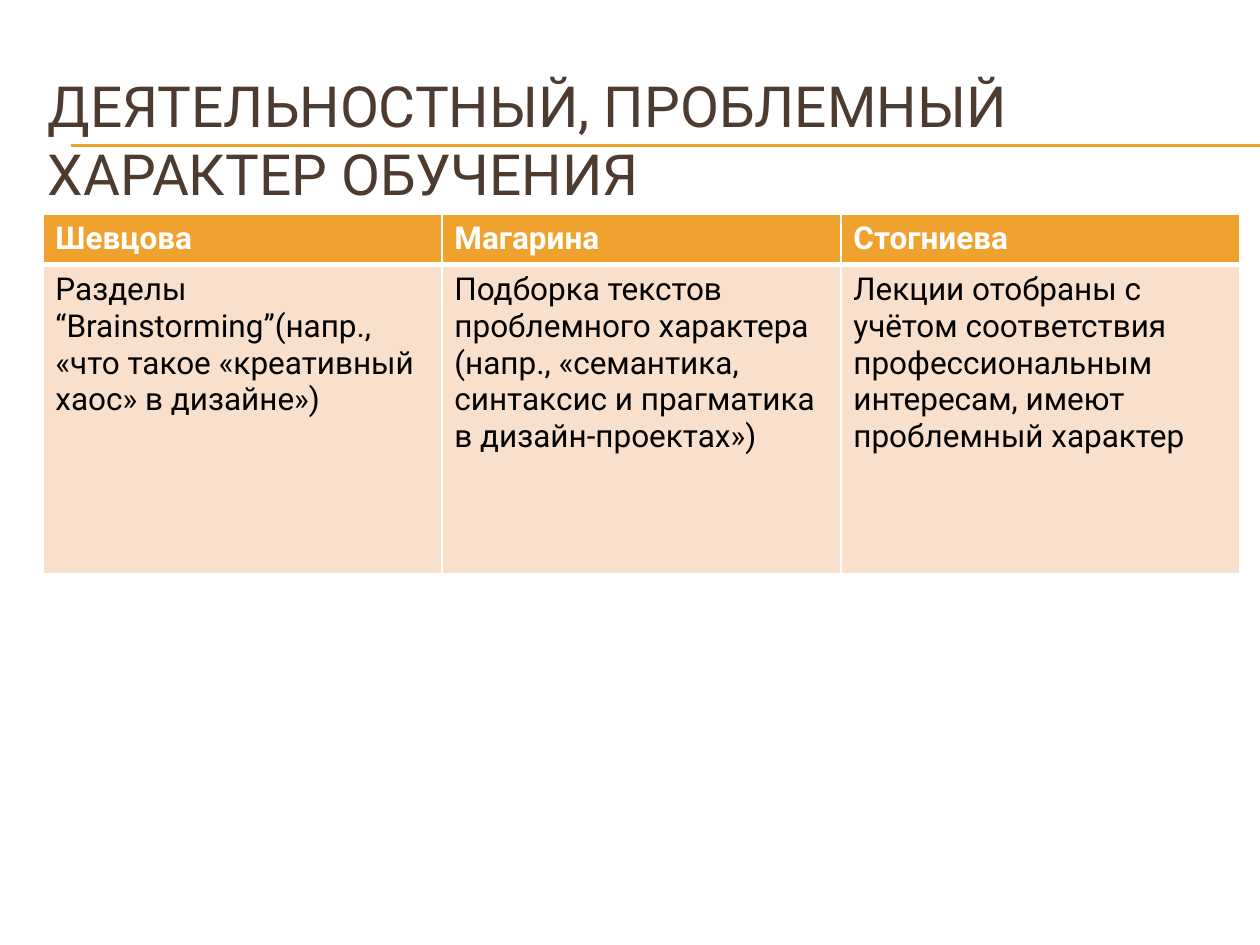
from lxml.etree import SubElement
from pptx import Presentation
from pptx.dml.color import RGBColor
from pptx.enum.shapes import MSO_CONNECTOR
from pptx.enum.text import MSO_ANCHOR
from pptx.oxml import parse_xml
from pptx.oxml.ns import nsdecls, qn
from pptx.util import Inches, Pt

FONT = "Roboto"
COLORS = {
    "title": "4E3B30",
    "accent": "F0A22E",
    "body": "F9E0CD",
    "white": "FFFFFF",
    "black": "000000",
}
ROWS = [
    ["Шевцова", "Магарина", "Стогниева"],
    [
        "Разделы “Brainstorming”(напр., «что такое «креативный хаос» в дизайне»)",
        "Подборка текстов проблемного характера (напр., «семантика, "
        "синтаксис и прагматика в дизайн-проектах»)",
        "Лекции отобраны с учётом соответствия профессиональным "
        "интересам, имеют проблемный характер",
    ],
]


def color(name):
    return RGBColor.from_string(COLORS[name])


def style(frame, size, tone, bold=False):
    for par in frame.paragraphs:
        for run in par.runs:
            font = run.font
            font.name, font.size, font.bold = FONT, Pt(size), bold
            font.color.rgb = color(tone)


def add_rule(slide, y):
    rule = slide.shapes.add_connector(
        MSO_CONNECTOR.STRAIGHT, Inches(0.56), Inches(y), Inches(10), Inches(y))
    rule.line.color.rgb = color("accent")
    rule.line.width = Pt(0.75)
    SubElement(rule._element.spPr, qn("a:effectLst"))


def add_title(slide, text):
    box = slide.shapes.add_textbox(
        Inches(0.28), Inches(0.5), Inches(9.56), Inches(1.2))
    frame = box.text_frame
    frame.word_wrap = True
    frame.vertical_anchor = MSO_ANCHOR.MIDDLE
    frame.text = text
    style(frame, 32.4, "title")


def set_edges(cell, top, bottom):
    # Borders come before the fill in the cell properties
    props = cell._tc.get_or_add_tcPr()
    edges = [("lnL", 1), ("lnR", 1), ("lnT", top), ("lnB", bottom)]
    for spot, (tag, width) in enumerate(edges):
        props.insert(spot, parse_xml(
            f'<a:{tag} {nsdecls("a")} w="{Pt(width)}"><a:solidFill>'
            f'<a:srgbClr val="{COLORS["white"]}"/></a:solidFill></a:{tag}>'))


def fill_cell(cell, text, head):
    cell.text_frame.text = text
    style(cell.text_frame, 18, "white" if head else "black", head)
    cell.fill.solid()
    cell.fill.fore_color.rgb = color("accent" if head else "body")
    set_edges(cell, 1 if head else 3, 3 if head else 1)


def add_grid(slide, rows):
    table = slide.shapes.add_table(
        len(rows), len(rows[0]), Inches(0.34), Inches(1.7),
        Inches(9.5), Inches(2.85)).table
    for row, height in zip(table.rows, (0.4, 2.45)):
        row.height = Inches(height)
    for i, texts in enumerate(rows):
        for j, text in enumerate(texts):
            fill_cell(table.cell(i, j), text, i == 0)


def main():
    deck = Presentation()
    deck.slide_width, deck.slide_height = Inches(10), Inches(7.5)
    slide = deck.slides.add_slide(deck.slide_layouts[6])

    # Double rule behind the title
    for y in (1.15, 1.16):
        add_rule(slide, y)

    # Title and comparison table
    add_title(slide, "ДЕЯТЕЛЬНОСТНЫЙ, ПРОБЛЕМНЫЙ ХАРАКТЕР ОБУЧЕНИЯ")
    add_grid(slide, ROWS)

    deck.save("out.pptx")


if __name__ == "__main__":
    main()
